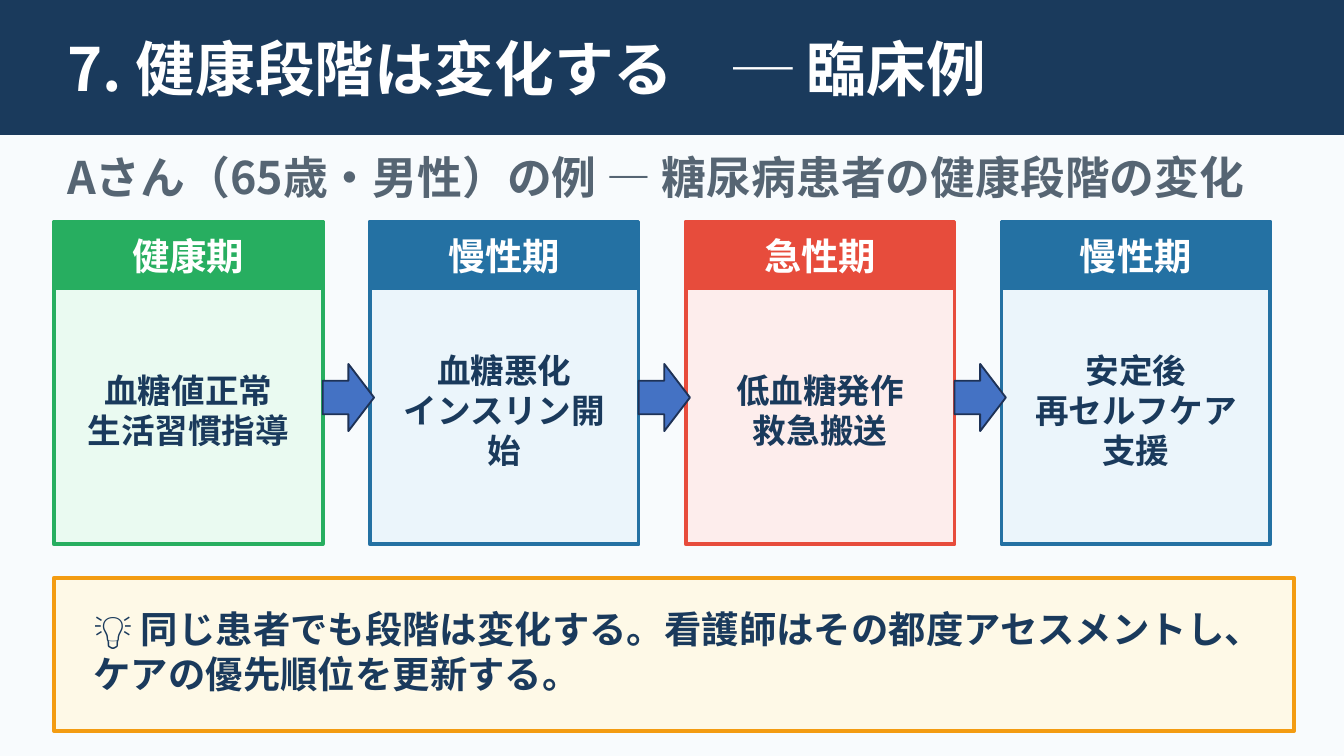
"""Build a slide showing how one patient's health stage changes over time."""
from dataclasses import dataclass

from lxml.etree import SubElement
from pptx import Presentation
from pptx.dml.color import RGBColor
from pptx.enum.shapes import MSO_SHAPE
from pptx.enum.text import MSO_ANCHOR, MSO_AUTO_SIZE, PP_ALIGN
from pptx.oxml.ns import qn
from pptx.util import Cm, Pt


@dataclass(frozen=True)
class Theme:
    font: str = "Noto Sans CJK JP"
    background: str = "F8FBFD"
    navy: str = "1A3A5C"
    white: str = "FFFFFF"
    gray: str = "566573"
    green: str = "27AE60"
    pale_green: str = "EAFAF1"
    blue: str = "2471A3"
    pale_blue: str = "EBF5FB"
    red: str = "E74C3C"
    pale_red: str = "FDEDEC"
    orange: str = "F39C12"
    pale_yellow: str = "FEF9E7"
    arrow: str = "4472C4"
    arrow_line: str = "1E3256"
    title_size: int = 32
    subtitle_size: int = 24
    label_size: int = 20
    detail_size: int = 18


theme = Theme()


def add_block(kind, left, top, width, height, fill, line, weight):
    block = slide.shapes.add_shape(kind, Cm(left), Cm(top), Cm(width), Cm(height))
    block.shadow.inherit = False
    block.fill.solid()
    block.fill.fore_color.rgb = RGBColor.from_string(fill)
    block.line.color.rgb = RGBColor.from_string(line)
    block.line.width = Pt(weight)
    return block


def write(box, left, top, width, height, text, size, color, align=PP_ALIGN.LEFT):
    box.left, box.top, box.width, box.height = Cm(left), Cm(top), Cm(width), Cm(height)
    frame = box.text_frame
    frame.text = text
    frame.word_wrap = True
    frame.auto_size = MSO_AUTO_SIZE.NONE
    frame.vertical_anchor = MSO_ANCHOR.MIDDLE
    for para in frame.paragraphs:
        para.alignment = align
        for span in para.runs:
            span.font.size = Pt(size)
            span.font.bold = True
            span.font.color.rgb = RGBColor.from_string(color)
            span.font.name = theme.font
            SubElement(span.font._element, qn("a:ea"), typeface=theme.font)
    return frame


deck = Presentation()
deck.slide_width, deck.slide_height = Cm(25.4), Cm(14.29)
slide = deck.slides.add_slide(deck.slide_layouts[5])
slide.background.fill.solid()
slide.background.fill.fore_color.rgb = RGBColor.from_string(theme.background)

title = slide.shapes.title
banner = add_block(MSO_SHAPE.RECTANGLE, 0, 0, 25.4, 2.54, theme.navy, theme.navy, 1)
title.element.addprevious(banner.element)
write(title, 1.02, 0.38, 23.37, 1.78, "7. 健康段階は変化する　─ 臨床例",
      theme.title_size, theme.white)

subtitle = slide.shapes.add_textbox(0, 0, 0, 0)
write(subtitle, 1.02, 2.77, 23.37, 1.14, "Aさん（65歳・男性）の例 — 糖尿病患者の健康段階の変化",
      theme.subtitle_size, theme.gray)

stages = [
    ("健康期", "血糖値正常\n生活習慣指導", theme.green, theme.pale_green),
    ("慢性期", "血糖悪化\nインスリン開始", theme.blue, theme.pale_blue),
    ("急性期", "低血糖発作\n救急搬送", theme.red, theme.pale_red),
    ("慢性期", "安定後\n再セルフケア支援", theme.blue, theme.pale_blue),
]
card_width, card_top, card_pitch = 5.08, 4.19, 5.97
card_lefts = [1.02 + index * card_pitch for index in range(len(stages))]

for left, (stage, detail, accent, tint) in zip(card_lefts, stages):
    add_block(MSO_SHAPE.RECTANGLE, left, card_top, card_width, 6.1, tint, accent, 2)
    add_block(MSO_SHAPE.RECTANGLE, left, card_top, card_width, 1.27, accent, accent, 1)
    header = slide.shapes.add_textbox(0, 0, 0, 0)
    frame = write(header, left, card_top + 0.08, card_width, 1.12, stage,
                  theme.label_size, theme.white, PP_ALIGN.CENTER)
    frame.margin_left = frame.margin_right = frame.margin_top = frame.margin_bottom = 0
    body = slide.shapes.add_textbox(0, 0, 0, 0)
    write(body, left + 0.25, card_top + 1.4, card_width - 0.5, 4.32, detail,
          theme.detail_size, theme.navy, PP_ALIGN.CENTER)

add_block(MSO_SHAPE.RECTANGLE, 1.02, 10.92, 23.44, 2.9, theme.pale_yellow, theme.orange, 2)
message = slide.shapes.add_textbox(0, 0, 0, 0)
write(message, 1.52, 11.05, 22.43, 2.51,
      "💡 同じ患者でも段階は変化する。看護師はその都度アセスメントし、ケアの優先順位を更新する。",
      theme.label_size, theme.navy)

for left in card_lefts[:-1]:
    add_block(MSO_SHAPE.RIGHT_ARROW, left + card_width, 6.88, 0.97, 1.27,
              theme.arrow, theme.arrow_line, 1)

deck.save("out.pptx")
